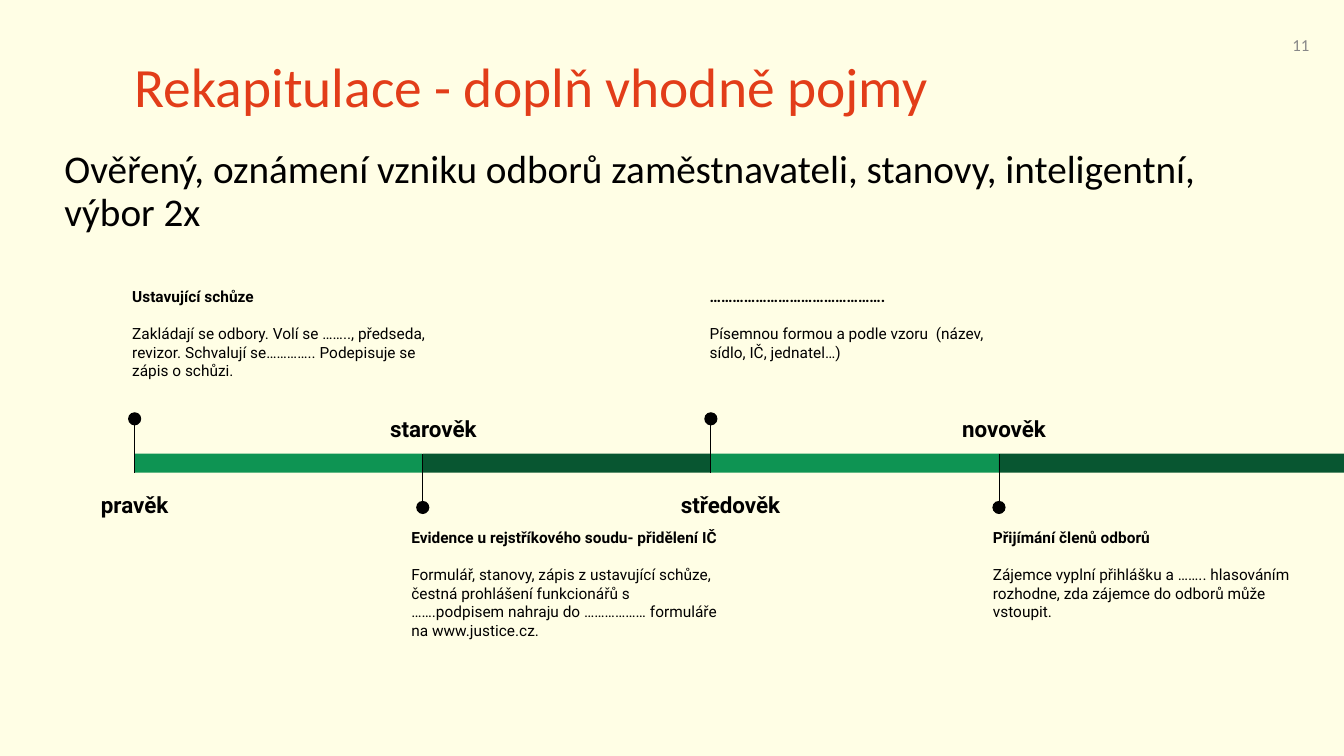
import pptx
import pptx.util
import pptx.dml.color
import pptx.enum.shapes
import pptx.enum.text
from lxml import etree

Pt = pptx.util.Pt
RGB = pptx.dml.color.RGBColor
SHAPE = pptx.enum.shapes.MSO_SHAPE
ALIGN = pptx.enum.text.PP_ALIGN
ANCHOR = pptx.enum.text.MSO_ANCHOR

CREAM = RGB(0xFF, 0xFE, 0xE5)
RED = RGB(0xE2, 0x3D, 0x19)
BLACK = RGB(0, 0, 0)
GRAY = RGB(0x88, 0x88, 0x88)
GREEN = RGB(0x0E, 0x94, 0x53)
DARK_GREEN = RGB(0x08, 0x56, 0x31)

TITLE = "Rekapitulace - doplň vhodně pojmy"
TERMS = ("Ověřený, oznámení vzniku odborů zaměstnavateli, stanovy, "
         "inteligentní, výbor 2x")
PAGE = "11"

# era, label centre offset, label width, note offset, note width, heading, body
STAGES = [
    ("pravěk", 0, 91.4, -11.2, 236.9, "Ustavující schůze",
     "Zakládají se odbory. Volí se …….., předseda, revizor. "
     "Schvalují se………….. Podepisuje se zápis o schůzi."),
    ("starověk", 7.6, 92.9, -17.6, 241.9,
     "Evidence u rejstříkového soudu- přidělení IČ",
     "Formulář, stanovy, zápis z ustavující schůze, čestná prohlášení "
     "funkcionářů s …….podpisem nahraju do ……………… formuláře na www.justice.cz."),
    ("středověk", 14, 96.5, -10.3, 236.9, "……………………………………….",
     "Písemnou formou a podle vzoru  (název, sídlo, IČ, jednatel…)"),
    ("novověk", 3.6, 85, -13.8, 236.9, "Přijímání členů odborů",
     "Zájemce vyplní přihlášku a …….. hlasováním rozhodne, "
     "zda zájemce do odborů může vstoupit."),
]

SLIDE_W, SLIDE_H = 960, 540
BAR_X, BAR_Y, BAR_H, STEP = 96.2, 324, 13.7, 205.8
DOT = 9.4
LABEL_H, NOTE_H = 38.9, 99.4


def add_text(s, box, anchor=ANCHOR.TOP, inset=(7.2, 3.6)):
    tf = s.shapes.add_textbox(*map(Pt, box)).text_frame
    tf.word_wrap = True
    tf.vertical_anchor = anchor
    tf.margin_left = tf.margin_right = Pt(inset[0])
    tf.margin_top = tf.margin_bottom = Pt(inset[1])
    return tf


def write(p, text, size, font="Roboto", color=BLACK, bold=False,
          align=ALIGN.LEFT, spacing=1.0):
    p.alignment = align
    p.line_spacing = spacing
    r = p.add_run()
    r.text = text
    r.font.size = Pt(size)
    r.font.name = font
    r.font.bold = bold
    r.font.color.rgb = color


def add_filled(s, kind, box, color):
    sp = s.shapes.add_shape(kind, *map(Pt, box))
    sp.shadow.inherit = False
    sp.fill.solid()
    sp.fill.fore_color.rgb = color
    sp.line.fill.background()


def add_stem(s, x, y1, y2):
    line = s.shapes.add_connector(pptx.enum.shapes.MSO_CONNECTOR.STRAIGHT,
                                  Pt(x), Pt(y1), Pt(x), Pt(y2))
    line.line.color.rgb = BLACK
    line.line.width = Pt(0.75)
    etree.SubElement(line._element.spPr, pptx.oxml.ns.qn("a:effectLst"))


def add_stage(s, i, era, shift, label_w, note_dx, note_w, heading, body):
    """Bar, pin, era label and note; notes alternate above and below the bar."""
    above = i % 2 == 0
    x = BAR_X + i * STEP
    end = SLIDE_W if i == len(STAGES) - 1 else x + STEP
    add_filled(s, SHAPE.RECTANGLE, (x, BAR_Y, end - x, BAR_H),
               GREEN if above else DARK_GREEN)
    if above:
        dot_y, far_y, label_y, note_y = 299.2, BAR_Y + BAR_H, 338.4, 195.8
    else:
        dot_y, far_y, label_y, note_y = 362.5, BAR_Y, 284.4, 367.9
    add_stem(s, x, dot_y, far_y)
    add_filled(s, SHAPE.OVAL, (x - DOT / 2, dot_y - DOT / 2, DOT, DOT), BLACK)

    tf = add_text(s, (x + shift - label_w / 2, label_y, label_w, LABEL_H),
                  inset=(9.4, 9.4))
    write(tf.paragraphs[0], era, 16, bold=True, align=ALIGN.CENTER, spacing=1.15)

    tf = add_text(s, (x + note_dx, note_y, note_w, NOTE_H), inset=(9.4, 9.4))
    write(tf.paragraphs[0], heading, 11, bold=True)
    p = tf.add_paragraph()
    p.space_before = Pt(13.2)
    write(p, body, 11)


def main():
    prs = pptx.Presentation()
    prs.slide_width, prs.slide_height = Pt(SLIDE_W), Pt(SLIDE_H)
    s = prs.slides.add_slide(prs.slide_layouts[6])
    s.background.fill.solid()
    s.background.fill.fore_color.rgb = CREAM

    tf = add_text(s, (89.3, 28.8, 804.2, 70.6), ANCHOR.MIDDLE)
    write(tf.paragraphs[0], TITLE, 39.6, "Calibri", RED, spacing=0.9)
    tf = add_text(s, (38.9, 103.7, 855.4, 405.4))
    write(tf.paragraphs[0], TERMS, 28, "Calibri", spacing=0.9)
    tf = add_text(s, (894.2, 17.3, 48.2, 28.8), ANCHOR.MIDDLE)
    write(tf.paragraphs[0], PAGE, 12, "Calibri", GRAY, align=ALIGN.RIGHT)

    for i, stage in enumerate(STAGES):
        add_stage(s, i, *stage)
    prs.save("out.pptx")


if __name__ == "__main__":
    main()
